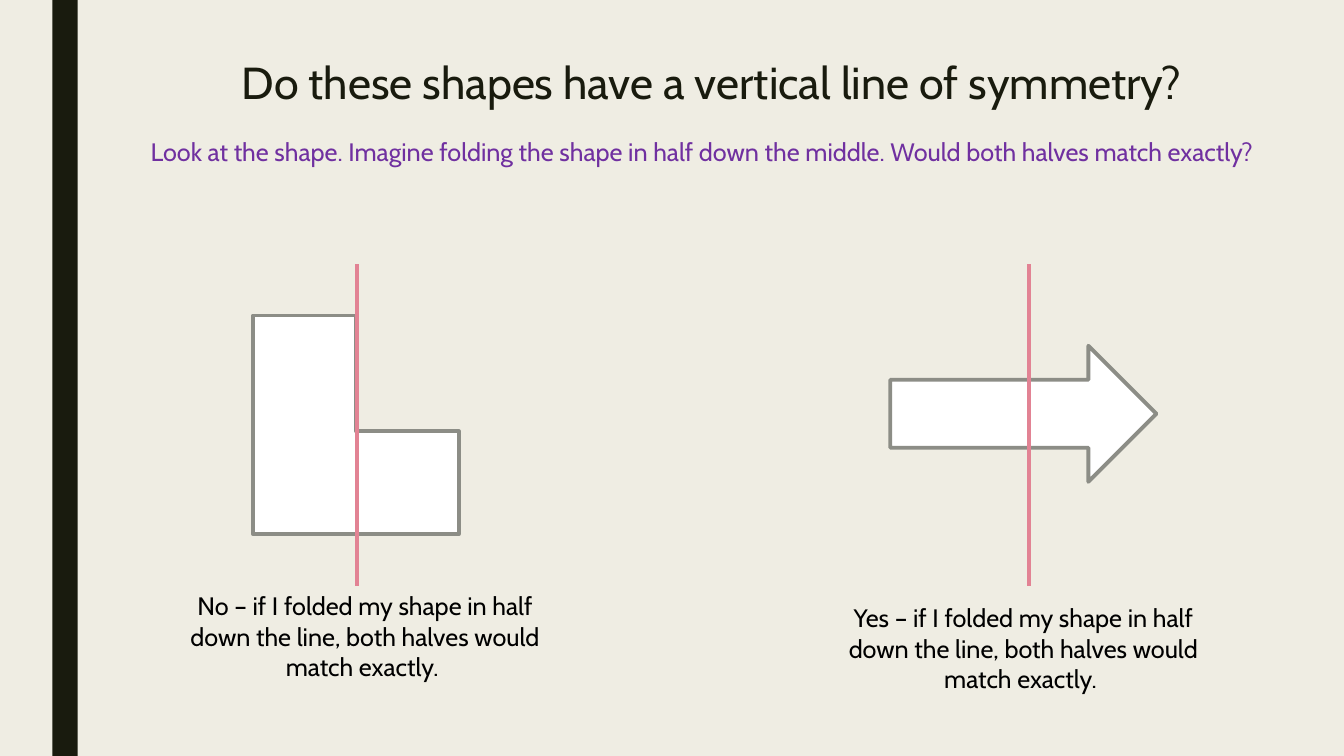
import pptx
import pptx.util
import pptx.dml.color
import pptx.enum.shapes
import pptx.enum.text
import pptx.oxml.ns
import lxml.etree

Inches, Pt = pptx.util.Inches, pptx.util.Pt
RGBColor = pptx.dml.color.RGBColor
MSO_SHAPE = pptx.enum.shapes.MSO_SHAPE
ANCHOR = pptx.enum.text.MSO_ANCHOR

# Content
TITLE = "Do these shapes have a vertical line of symmetry? "
PROMPT = ("Look at the shape. Imagine folding the shape in half down the middle. "
          "Would both halves match exactly? ")
ANSWER = " – if I folded my shape in half down the line, both halves would match exactly. "
EXAMPLES = [  # outline, its box, fold position, verdict, caption left and top
    (MSO_SHAPE.CORNER, (2.51, 3.13, 2.04, 2.17), 3.54, "No", (1.55, 5.81)),
    (MSO_SHAPE.RIGHT_ARROW, (8.83, 3.43, 2.64, 1.35), 10.21, "Yes", (8.08, 5.93)),
]

# Style
FONT = "Cabin"
CREAM = RGBColor(0xEF, 0xED, 0xE3)
DARK = RGBColor(0x19, 0x1B, 0x0E)
WHITE = RGBColor(0xFF, 0xFF, 0xFF)
GREY = RGBColor(0x8C, 0x8D, 0x86)
PURPLE = RGBColor(0x70, 0x30, 0xA0)
BLACK = RGBColor(0, 0, 0)
PINK = RGBColor(0xE2, 0x83, 0x94)
STROKE = Pt(2.75)

# Layout in inches
WIDTH, HEIGHT = 13.33, 7.5
HEADING_WIDTH = 11.58
CAPTION_SIZE = (4.14, 1.01)
FOLD_TOP, FOLD_BOTTOM = 2.62, 5.81

deck = pptx.Presentation()
deck.slide_width, deck.slide_height = Inches(WIDTH), Inches(HEIGHT)
slide = deck.slides.add_slide(deck.slide_layouts[6])
slide.background.fill.solid()
slide.background.fill.fore_color.rgb = CREAM


def add_text(words, box, size=18, color=BLACK, anchor=ANCHOR.TOP, leading=None,
             before=0, after=0):
    frame = slide.shapes.add_textbox(*map(Inches, box)).text_frame
    frame.word_wrap = True
    frame.vertical_anchor = anchor
    paragraph = frame.paragraphs[0]
    paragraph.alignment = pptx.enum.text.PP_ALIGN.CENTER
    paragraph.line_spacing = leading
    paragraph.space_before, paragraph.space_after = Pt(before), Pt(after)
    run = paragraph.add_run()
    run.text = words
    run.font.name, run.font.size = FONT, Pt(size)
    run.font.color.rgb = color


def add_outline(kind, box, fill, line=None):
    outline = slide.shapes.add_shape(kind, *map(Inches, box))
    outline.shadow.inherit = False
    outline.fill.solid()
    outline.fill.fore_color.rgb = fill
    if line is None:
        outline.line.fill.background()
    else:
        outline.line.color.rgb = line
        outline.line.width = STROKE


def add_fold(x):
    fold = slide.shapes.add_connector(
        pptx.enum.shapes.MSO_CONNECTOR.STRAIGHT,
        *map(Inches, (x, FOLD_TOP, x, FOLD_BOTTOM)))
    fold.line.color.rgb = PINK
    fold.line.width = STROKE
    lxml.etree.SubElement(fold._element.spPr, pptx.oxml.ns.qn("a:effectLst"))


# Side band and headings
add_outline(MSO_SHAPE.RECTANGLE, (0.52, 0, 0.25, HEIGHT), DARK)
add_text(TITLE, (1.32, 0.24, HEADING_WIDTH, 1.19), size=32, color=DARK,
         anchor=ANCHOR.MIDDLE, leading=0.94, before=10, after=2)
add_text(PROMPT, (1.2, 1.3, HEADING_WIDTH, 0.4), color=PURPLE)

# Each shape with its fold line and answer
for kind, box, fold_x, verdict, caption_at in EXAMPLES:
    add_outline(kind, box, WHITE, GREY)
    add_fold(fold_x)
    add_text(verdict + ANSWER, caption_at + CAPTION_SIZE)

deck.save("out.pptx")
